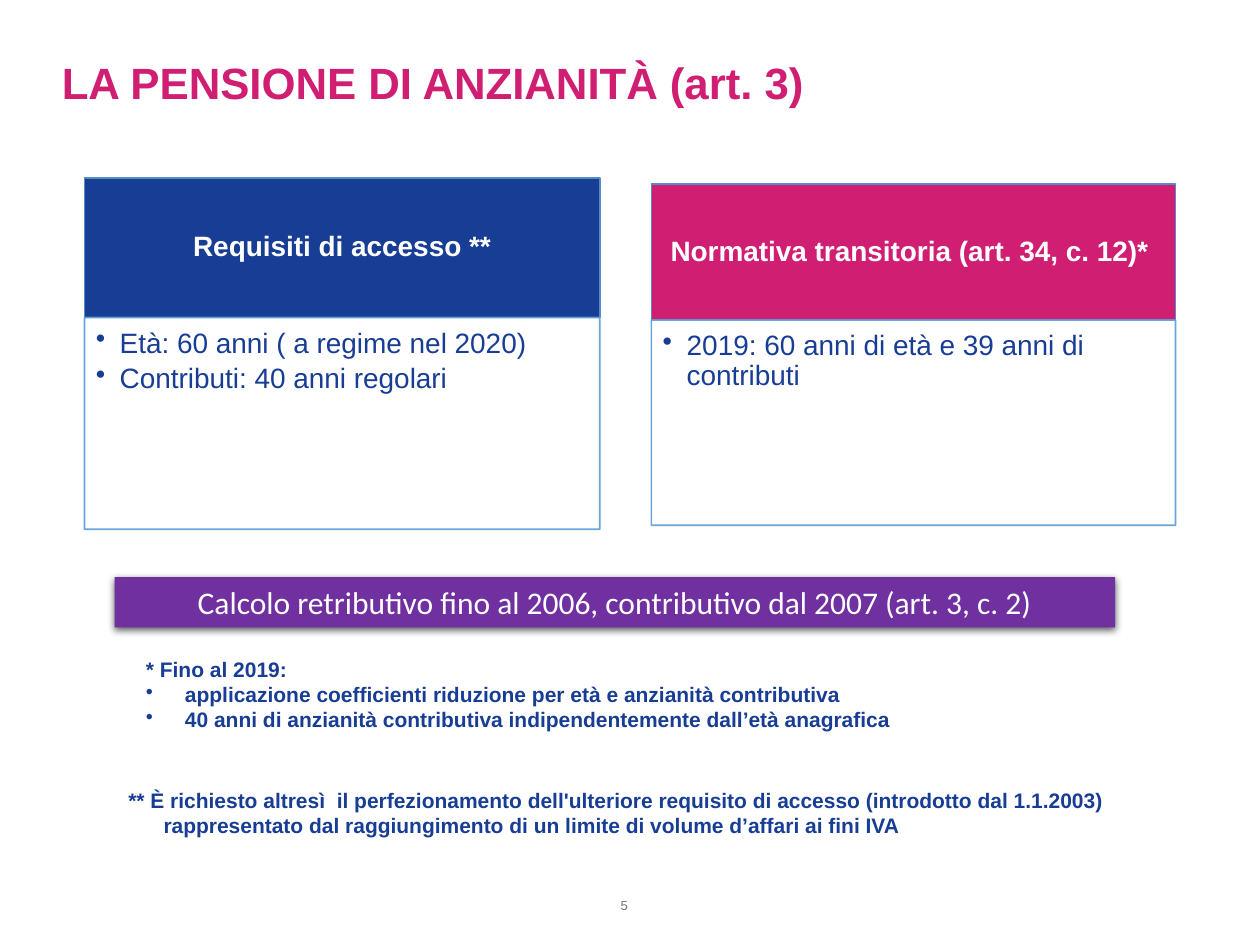
from dataclasses import dataclass

from lxml.etree import SubElement
from pptx import Presentation
from pptx.dml.color import RGBColor
from pptx.enum.shapes import MSO_SHAPE as Shape
from pptx.enum.text import MSO_ANCHOR as Anchor, PP_ALIGN as Align
from pptx.oxml.ns import qn
from pptx.util import Inches, Pt


@dataclass(frozen=True)
class Theme:
    blue: str = "183D95"
    magenta: str = "D01F73"
    purple: str = "7030A0"
    white: str = "FFFFFF"
    gray: str = "76777A"
    header_line: str = "538DC1"
    body_line: str = "5B9BD5"
    font: str = "Arial"
    banner_font: str = "Calibri"
    title_size: float = 25
    panel_size: float = 16
    banner_size: float = 18
    note_size: float = 12
    number_size: float = 7.5


THEME = Theme()


def rgb(color):
    return RGBColor.from_string(color)


def set_alpha(color_format_parent, percent):
    """Make every solid colour below the given element partly transparent."""
    for color in color_format_parent.iter(qn("a:srgbClr")):
        SubElement(color, qn("a:alpha"), val=str(percent * 1000))


def set_frame(shape, insets=(0.1, 0.05, 0.1, 0.05), anchor=Anchor.TOP):
    frame = shape.text_frame
    frame.word_wrap = True
    frame.vertical_anchor = anchor
    (frame.margin_left, frame.margin_top,
     frame.margin_right, frame.margin_bottom) = map(Inches, insets)
    return frame


def write(frame, lines, size, color, bold=False, font=THEME.font, align=Align.LEFT):
    """Fill the frame with one paragraph per line and return the paragraphs."""
    frame.text = "\n".join(lines)
    for paragraph in frame.paragraphs:
        paragraph.alignment = align
        paragraph.font.size = Pt(size)
        paragraph.font.name = font
        paragraph.font.bold = bold
        paragraph.font.color.rgb = rgb(color)
    return frame.paragraphs


def set_indent(paragraph, left, first=0.0, bullet=None):
    properties = paragraph._p.get_or_add_pPr()
    properties.set("marL", str(Inches(left)))
    properties.set("indent", str(Inches(first)))
    if bullet:
        mark = SubElement(properties, qn("a:buChar"), char=bullet)
        default_font = properties.find(qn("a:defRPr"))
        if default_font is not None:
            default_font.addprevious(mark)


def add_box(slide, box, fill, line=None):
    shape = slide.shapes.add_shape(Shape.RECTANGLE, *map(Inches, box))
    shape.shadow.inherit = False
    shape.fill.solid()
    shape.fill.fore_color.rgb = rgb(fill)
    if line:
        shape.line.color.rgb = rgb(line)
        shape.line.width = Pt(1)
    else:
        shape.line.fill.background()
    return shape


def add_title(slide, box, text):
    title = slide.shapes.title
    title.left, title.top, title.width, title.height = map(Inches, box)
    frame = set_frame(title, (0, 0, 0, 0))
    paragraph, = write(frame, [text], THEME.title_size, THEME.magenta, bold=True)
    paragraph.line_spacing = Pt(30)


def add_panel(slide, box, header_height, color, heading, items):
    """Coloured header over a framed bullet list."""
    left, top, width, height = box
    header = add_box(slide, (left, top, width, header_height), color, THEME.header_line)
    frame = set_frame(header, (0.12, 0.07, 0.12, 0.07), Anchor.MIDDLE)
    paragraph, = write(frame, [heading], THEME.panel_size, THEME.white,
                       bold=True, align=Align.CENTER)
    paragraph.line_spacing = 0.9

    body = add_box(slide, (left, top + header_height, width, height - header_height),
                   THEME.white, THEME.body_line)
    set_alpha(body._element.spPr, 90)
    frame = set_frame(body, (0.09, 0.09, 0.12, 0.14))
    for paragraph in write(frame, items, THEME.panel_size, THEME.blue):
        set_indent(paragraph, 0.19, -0.19, "•")
        paragraph.line_spacing = 0.9
        paragraph.space_after = Pt(2.8)


def add_banner(slide, box, text):
    banner = add_box(slide, box, THEME.purple)
    effects = banner._element.spPr.find(qn("a:effectLst"))
    shadow = SubElement(effects, qn("a:outerShdw"), blurRad=str(Pt(4.5)),
                        dist=str(Pt(1.5)), dir="5400000", rotWithShape="0")
    SubElement(shadow, qn("a:srgbClr"), val="000000")
    set_alpha(effects, 63)
    write(set_frame(banner), [text], THEME.banner_size, THEME.white,
          font=THEME.banner_font, align=Align.CENTER)


def add_note(slide, box, lines):
    note = slide.shapes.add_textbox(*map(Inches, box))
    return write(set_frame(note), lines, THEME.note_size, THEME.blue, bold=True)


def add_slide_number(slide, box, number):
    shape = slide.shapes.add_textbox(*map(Inches, box))
    frame = set_frame(shape, (0, 0, 0.1, 0.05), Anchor.MIDDLE)
    write(frame, [number], THEME.number_size, THEME.gray, align=Align.CENTER)


def main():
    presentation = Presentation()
    presentation.slide_width, presentation.slide_height = Inches(10), Inches(7.5)
    slide = presentation.slides.add_slide(presentation.slide_layouts[5])

    add_title(slide, (0.49, 0.44, 9.01, 0.82), "LA PENSIONE DI ANZIANITÀ (art. 3)")
    add_panel(slide, (0.67, 1.41, 4.09, 2.79), 1.11, THEME.blue,
              "Requisiti di accesso **",
              ["Età: 60 anni ( a regime nel 2020)", "Contributi: 40 anni regolari"])
    add_panel(slide, (5.17, 1.46, 4.16, 2.71), 1.08, THEME.magenta,
              "Normativa transitoria (art. 34, c. 12)* ",
              ["2019: 60 anni di età e 39 anni di contributi"])
    add_banner(slide, (0.91, 4.58, 7.94, 0.4),
               "Calcolo retributivo fino al 2006, contributivo dal 2007 (art. 3, c. 2)")

    _, *conditions = add_note(slide, (1.06, 5.16, 7.94, 0.91), [
        "* Fino al 2019:",
        "applicazione coefficienti riduzione per età e anzianità contributiva",
        "40 anni di anzianità contributiva indipendentemente dall’età anagrafica"])
    for paragraph in conditions:
        set_indent(paragraph, 0.31, -0.31, "•")

    _, continuation = add_note(slide, (0.92, 6.2, 8.33, 0.5), [
        "** È richiesto altresì  il perfezionamento dell'ulteriore requisito di accesso "
        "(introdotto dal 1.1.2003)",
        "rappresentato dal raggiungimento di un limite di volume d’affari ai fini IVA"])
    set_indent(continuation, 0.28)

    add_slide_number(slide, (4.47, 7.01, 1.07, 0.4), "5")
    presentation.save("out.pptx")


if __name__ == "__main__":
    main()
